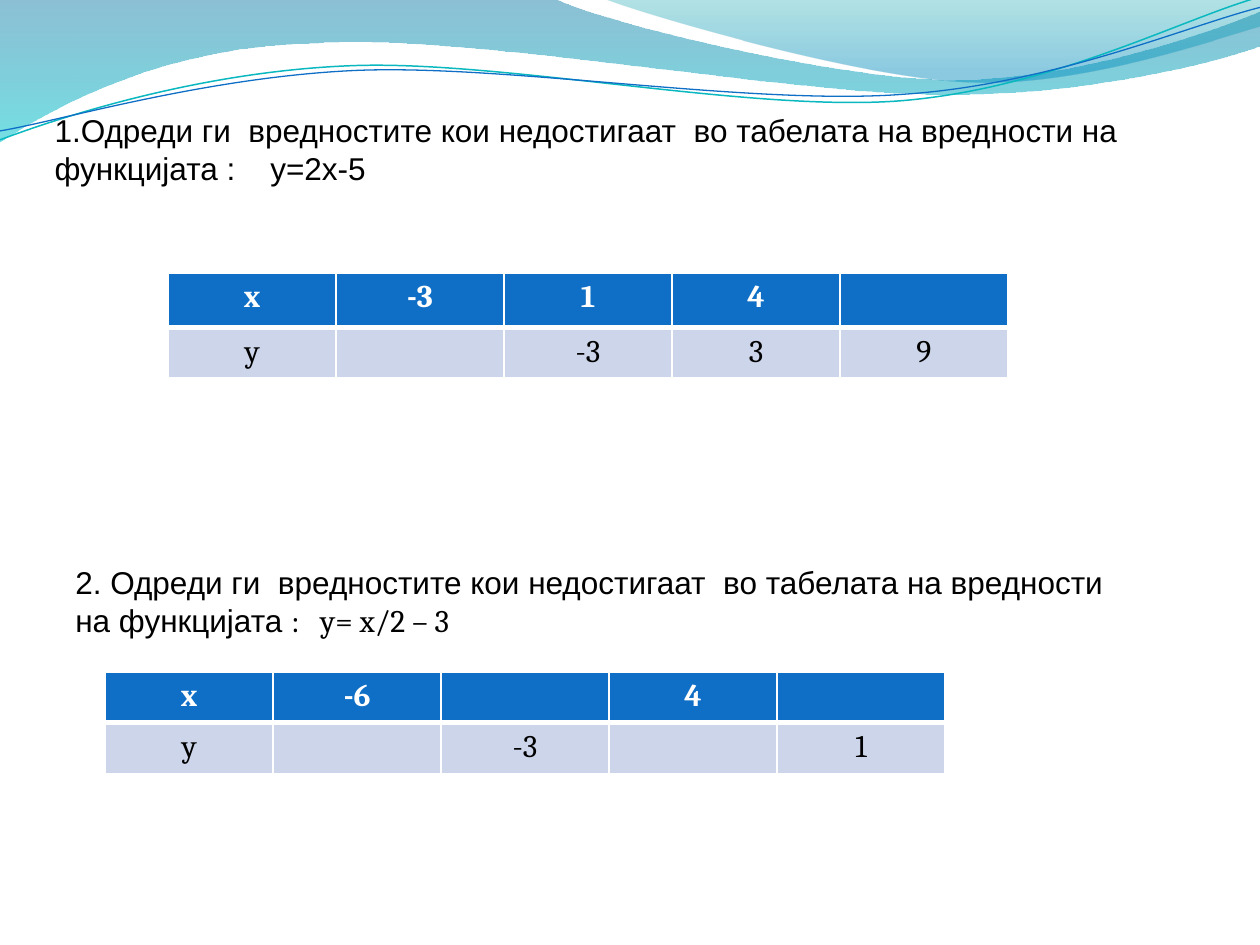
from lxml import etree
from pptx import Presentation
from pptx.dml.color import RGBColor
from pptx.enum import text
from pptx.oxml import ns
from pptx.util import Cm, Pt

WHITE = RGBColor(0xFF, 0xFF, 0xFF)
BLACK = RGBColor(0x00, 0x00, 0x00)
BLUE = RGBColor(0x0F, 0x6F, 0xC6)
PALE_BLUE = RGBColor(0xCC, 0xD5, 0xEA)
TEAL = RGBColor(0x0A, 0xB8, 0xBF)
DEEP_BLUE = RGBColor(0x00, 0x74, 0xA1)
TURQUOISE = RGBColor(0x00, 0xC6, 0xCF)
SEA_GREEN = RGBColor(0x00, 0xA1, 0xA9)
SKY_BLUE = RGBColor(0x00, 0x8B, 0xBF)

# Outlines in centimetres: one point is a straight step,
# three points are a Bézier step (two controls and the end).
LEFT_WAVE = [
    [(0, 0)],
    [(11.18, -0.03)],
    [(12.09, 0.43), (16.87, 1.6), (19.25, 1.6)],
    [(21.67, 1.6), (24.33, 0.66), (25.4, 0.23)],
    [(25.43, 0.91)],
    [(24.97, 1.12), (22.1, 1.93), (18.95, 1.9)],
    [(15.8, 1.9), (9.7, 0.71), (6.53, 0.86)],
    [(3.28, 0.91), (1.17, 2.11), (-0.03, 2.87)],
    [(0, 0)],
]
RIGHT_WAVE = [
    [(12.17, -0.03)],
    [(12.93, 0.28), (17.32, 1.57), (19.53, 1.65)],
    [(21.74, 1.75), (24.41, 0.81), (25.4, 0.53)],
    [(25.4, 0)],
    [(12.17, -0.03)],
]
# The two curves are given before their turn.
CURVE_ROTATION = 357.3
TEAL_CURVE = [
    [(-0.05, 2.22)],
    [(1.19, 1.82), (4.01, 1.04), (7.05, 1.06)],
    [(10.05, 1.07), (15.02, 2.37), (18.08, 2.29)],
    [(21.13, 2.2), (23.86, 0.91), (25.41, 0.55)],
]
BLUE_CURVE = [
    [(-0.04, 2.04)],
    [(1.16, 1.9), (4.17, 1.15), (7.2, 1.16)],
    [(10.25, 1.18), (15.13, 2.25), (18.19, 2.16)],
    [(21.21, 2.1), (23.93, 1.06), (25.45, 0.75)],
]


def add_outline(slide, outline, close):
    """Add a freeform, joining the points of each Bézier step into one curve."""
    start, *others = [(Cm(x), Cm(y)) for step in outline for x, y in step]
    builder = slide.shapes.build_freeform(*start)
    builder.add_line_segments(others, close=close)
    shape = builder.convert_to_shape()
    shape.shadow.inherit = False
    segments = iter(shape.element.xpath(".//a:lnTo"))
    for step in outline[1:]:
        parts = [next(segments) for _ in step]
        if len(parts) == 3:
            curve = etree.Element(ns.qn("a:cubicBezTo"))
            parts[0].addprevious(curve)
            for part in parts:
                curve.append(part[0])
                part.getparent().remove(part)
    return shape


def add_wave(slide, outline, stops):
    """Add a filled wave; each stop is position, colour and opacity in percent."""
    shape = add_outline(slide, outline, close=True)
    shape.line.fill.background()
    shape.fill.gradient()
    shape.fill.gradient_angle = 270
    for stop, (position, color, _) in zip(shape.fill.gradient_stops, stops):
        stop.position = position
        stop.color.rgb = color
    colors = shape.element.xpath(".//a:gsLst//a:srgbClr")
    for element, (_, _, opacity) in zip(colors, stops):
        etree.SubElement(element, ns.qn("a:alpha"), val=str(opacity * 1000))


def add_curve(slide, outline, color, width):
    shape = add_outline(slide, outline, close=False)
    shape.rotation = CURVE_ROTATION
    shape.fill.background()
    shape.line.color.rgb = color
    shape.line.width = Pt(width)


def add_task(slide, left, top, width, height, runs):
    """Add the wording of a task; each run is text and font name."""
    box = slide.shapes.add_textbox(Cm(left), Cm(top), Cm(width), Cm(height))
    box.text_frame.word_wrap = True
    paragraph = box.text_frame.paragraphs[0]
    paragraph.font.size = Pt(18)
    paragraph.font.color.rgb = BLACK
    for words, font_name in runs:
        run = paragraph.add_run()
        run.text = words
        run.font.name = font_name


def set_borders(cell, widths):
    """Draw white borders; widths are points by side, in the order L, R, T, B."""
    properties = cell._tc.get_or_add_tcPr()
    for i, (side, width) in enumerate(widths.items()):
        line = etree.Element(ns.qn(f"a:ln{side}"), w=str(Pt(width)))
        fill = etree.SubElement(line, ns.qn("a:solidFill"))
        etree.SubElement(fill, ns.qn("a:srgbClr"), val=str(WHITE))
        properties.insert(i, line)


def add_value_table(slide, left, top, row_heights, rows):
    shape = slide.shapes.add_table(
        len(rows), len(rows[0]), Cm(left), Cm(top), Cm(16.93), Cm(sum(row_heights)))
    table = shape.table
    styles = [(BLUE, WHITE, True, 3), (PALE_BLUE, BLACK, False, 1)]
    for i, (values, style) in enumerate(zip(rows, styles)):
        fill, color, bold, bottom = style
        table.rows[i].height = Cm(row_heights[i])
        for cell, value in zip(table.rows[i].cells, values):
            cell.fill.solid()
            cell.fill.fore_color.rgb = fill
            set_borders(cell, {"L": 1, "R": 1, "T": 1, "B": bottom})
            cell.text = value
            paragraph = cell.text_frame.paragraphs[0]
            paragraph.alignment = text.PP_ALIGN.CENTER
            font = paragraph.font
            font.name, font.size, font.bold = "Cambria", Pt(18), bold
            font.color.rgb = color


def main():
    presentation = Presentation()
    presentation.slide_width, presentation.slide_height = Cm(25.4), Cm(19.05)
    slide = presentation.slides.add_slide(presentation.slide_layouts[6])

    add_wave(slide, LEFT_WAVE, [(0, DEEP_BLUE, 45), (1, TURQUOISE, 55)])
    add_wave(slide, RIGHT_WAVE, [(0, SEA_GREEN, 30), (0.8, SKY_BLUE, 45)])
    add_curve(slide, TEAL_CURVE, TEAL, 0.85)
    add_curve(slide, BLUE_CURVE, BLUE, 0.75)

    add_task(slide, 0.85, 2.12, 22.23, 7.09, [
        ("1.Одреди ги  вредностите кои недостигаат  во табелата на вредности на "
         "функцијата :    y=2x-5", "Arial")])
    add_value_table(slide, 3.39, 5.5, (1.1, 1.02), [
        ("x", "-3", "1", "4", ""),
        ("y", "", "-3", "3", "9")])

    add_task(slide, 1.27, 11.22, 21.38, 4.87, [
        ("2. Одреди ги  вредностите кои недостигаат  во табелата на вредности "
         "на функцијата ", "Arial"),
        (":   y= x/2 – 3", "Cambria")])
    add_value_table(slide, 2.12, 13.55, (1.02, 1.02), [
        ("x", "-6", "", "4", ""),
        ("y", "", "-3", "", "1")])

    presentation.save("out.pptx")


if __name__ == "__main__":
    main()
